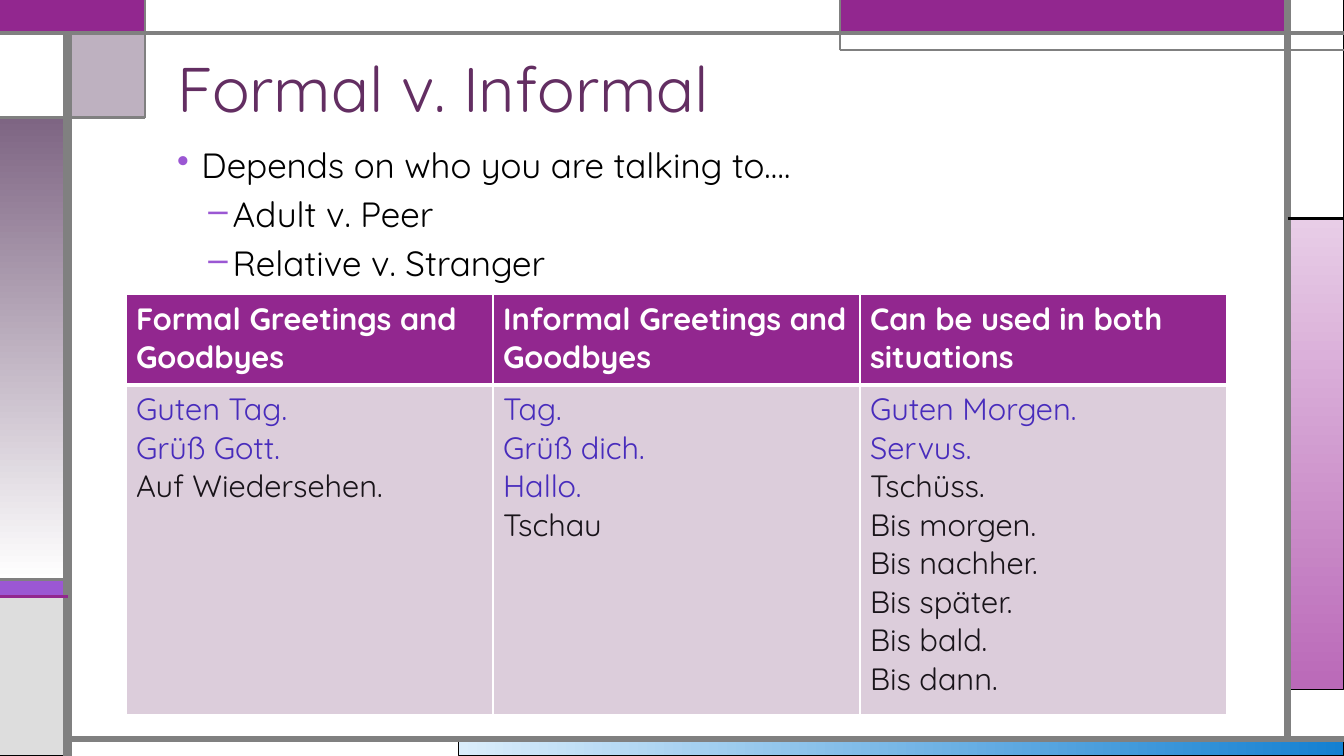
from dataclasses import dataclass

from lxml import etree
from pptx import Presentation
from pptx.dml.color import RGBColor
from pptx.enum.shapes import MSO_CONNECTOR, MSO_SHAPE
from pptx.enum.text import MSO_ANCHOR, PP_ALIGN
from pptx.oxml.ns import qn
from pptx.util import Inches, Pt

RECTANGLE = MSO_SHAPE.RECTANGLE
STRAIGHT = MSO_CONNECTOR.STRAIGHT
BOTTOM = MSO_ANCHOR.BOTTOM
LEFT = PP_ALIGN.LEFT

FONT = "Quicksand"
WHITE = RGBColor(0xFF, 0xFF, 0xFF)
BLACK = RGBColor(0x00, 0x00, 0x00)
GRAY = RGBColor(0x80, 0x80, 0x80)
LIGHT_GRAY = RGBColor(0xDD, 0xDD, 0xDD)
MAGENTA = RGBColor(0x92, 0x27, 0x8F)
VIOLET = RGBColor(0x9B, 0x57, 0xD3)
BLUE_VIOLET = RGBColor(0x75, 0x5D, 0xD9)
MAUVE = RGBColor(0x7E, 0x65, 0x83)
PALE_BLUE = RGBColor(0xDA, 0xED, 0xFB)
BLUE = RGBColor(0x14, 0x80, 0xD1)
PALE_PINK = RGBColor(0xE8, 0xCD, 0xE7)
PINK = RGBColor(0xBA, 0x69, 0xB8)
PLUM = RGBColor(0x63, 0x2E, 0x62)
CELL_FILL = RGBColor(0xDC, 0xCD, 0xDB)
GREETING = RGBColor(0x48, 0x2C, 0xBC)
GOODBYE = RGBColor(0x19, 0x14, 0x1A)

# Edges of the frame around the slide, in inches
WIDTH, HEIGHT = 13.33, 7.5
BAR_X, TAB_X, BANNER_X, RIGHT_X = 0.67, 1.44, 8.33, 12.77
TOP_Y, TAB_Y, STRIPE_Y, BASE_Y, FLOOR_Y = 0.33, 1.17, 5.75, 5.92, 7.33
PANEL_Y, BANNER_Y = 2.17, 0.5


@dataclass(frozen=True)
class Block:
    left: float
    top: float
    right: float
    bottom: float
    color: RGBColor
    line: RGBColor = BLACK
    line_width: float = 0.75
    end_color: RGBColor | None = None
    angle: int = 0
    alpha: int = 100


@dataclass(frozen=True)
class Rule:
    x1: float
    y1: float
    x2: float
    y2: float
    width: float
    color: RGBColor = GRAY


@dataclass(frozen=True)
class Bullet:
    text: str
    mark: str
    level: int
    margin: float
    space_before: int


@dataclass(frozen=True)
class Column:
    heading: str
    greetings: list[str]
    goodbyes: list[str]


BLOCKS = [
    Block(4.55, FLOOR_Y, WIDTH, HEIGHT, PALE_BLUE, end_color=BLUE),
    Block(RIGHT_X, PANEL_Y, WIDTH, 6.84, PALE_PINK, end_color=PINK, angle=270),
    Block(0, STRIPE_Y, BAR_X, BASE_Y, VIOLET),
    Block(0, BASE_Y, BAR_X, HEIGHT, LIGHT_GRAY),
    Block(RIGHT_X, 0, WIDTH, PANEL_Y, WHITE),
    Block(BANNER_X, 0, RIGHT_X, TOP_Y, MAGENTA, BLUE_VIOLET),
    Block(BAR_X, TOP_Y, TAB_X, TAB_Y, MAUVE, alpha=50),
    Block(0, TAB_Y, BAR_X, STRIPE_Y, MAUVE, end_color=WHITE, angle=270),
    Block(0, TOP_Y, BAR_X, TAB_Y, WHITE),
    Block(0, 0, TAB_X, TOP_Y, MAGENTA, MAGENTA, 1.5),
    Block(TAB_X, 0, BANNER_X, TOP_Y, WHITE, GRAY),
]
RULES = [
    Rule(BAR_X, HEIGHT, BAR_X, TOP_Y, 6),
    Rule(BAR_X, FLOOR_Y, WIDTH, FLOOR_Y, 4.5),
    Rule(RIGHT_X, FLOOR_Y, RIGHT_X, 0, 4.5),
    Rule(0, TOP_Y, WIDTH, TOP_Y, 3),
    Rule(WIDTH, BANNER_Y, BANNER_X, BANNER_Y, 1.5),
    Rule(BANNER_X, BANNER_Y, BANNER_X, 0, 1.5),
    Rule(RIGHT_X, PANEL_Y, WIDTH, PANEL_Y, 2.25, BLACK),
    Rule(TAB_X, 0, TAB_X, TAB_Y, 1.5),
    Rule(TAB_X, TAB_Y, 0, TAB_Y, 2.25),
    Rule(BAR_X, STRIPE_Y, 0, STRIPE_Y, 2.25),
    Rule(BAR_X, BASE_Y, 0, BASE_Y, 2.25, MAGENTA),
]
BULLETS = [
    Bullet("Depends on who you are talking to….", "•", 0, 0.24, 18),
    Bullet("Adult v. Peer", "–", 1, 0.55, 8),
    Bullet("Relative v. Stranger", "–", 1, 0.55, 8),
]
COLUMNS = [
    Column("Formal Greetings and Goodbyes", ["Guten Tag.", "Grüß Gott."], ["Auf Wiedersehen."]),
    Column("Informal Greetings and Goodbyes", ["Tag.", "Grüß dich.", "Hallo."], ["Tschau"]),
    Column("Can be used in both situations", ["Guten Morgen.", "Servus."],
           ["Tschüss.", "Bis morgen.", "Bis nachher.", "Bis später.", "Bis bald.", "Bis dann."]),
]


def style_font(paragraph, size: float, color: RGBColor, bold: bool = False) -> None:
    font = paragraph.font
    font.name, font.size, font.bold = FONT, Pt(size), bold
    font.color.rgb = color


def draw_block(slide, block: Block) -> None:
    shape = slide.shapes.add_shape(
        RECTANGLE, Inches(block.left), Inches(block.top),
        Inches(block.right - block.left), Inches(block.bottom - block.top))
    shape.shadow.inherit = False
    if block.end_color is None:
        shape.fill.solid()
        shape.fill.fore_color.rgb = block.color
    else:
        shape.fill.gradient()
        shape.fill.gradient_angle = block.angle
        for stop, color in zip(shape.fill.gradient_stops, (block.color, block.end_color)):
            stop.color.rgb = color
    if block.alpha < 100:
        color_element = shape.fill._xPr.find(f"{qn('a:solidFill')}/{qn('a:srgbClr')}")
        etree.SubElement(color_element, qn("a:alpha"), val=str(block.alpha * 1000))
    shape.line.color.rgb = block.line
    shape.line.width = Pt(block.line_width)


def draw_rule(slide, rule: Rule) -> None:
    connector = slide.shapes.add_connector(
        STRAIGHT, Inches(rule.x1), Inches(rule.y1), Inches(rule.x2), Inches(rule.y2))
    connector.line.color.rgb = rule.color
    connector.line.width = Pt(rule.width)
    etree.SubElement(connector._element.spPr, qn("a:effectLst"))


def write_title(slide) -> None:
    title = slide.shapes.title
    title.left, title.top = Inches(1.66), Inches(0.58)
    title.width, title.height = Inches(10.5), Inches(0.72)
    title.text_frame.text = "Formal v. Informal"
    title.text_frame.vertical_anchor = BOTTOM
    paragraph = title.text_frame.paragraphs[0]
    paragraph.alignment, paragraph.line_spacing = LEFT, 0.9
    style_font(paragraph, 45, PLUM)


def write_bullets(slide) -> None:
    box = slide.shapes.add_textbox(Inches(1.66), Inches(1.42), Inches(10.5), Inches(1.45))
    frame = box.text_frame
    frame.word_wrap = True
    frame.text = "\n".join(bullet.text for bullet in BULLETS)
    for paragraph, bullet in zip(frame.paragraphs, BULLETS):
        paragraph.level, paragraph.line_spacing = bullet.level, 0.9
        paragraph.space_before = Pt(bullet.space_before)
        style_font(paragraph, 25, BLACK)
        properties = paragraph._p.get_or_add_pPr()
        properties.set("marL", str(Inches(bullet.margin)))
        properties.set("indent", str(Inches(-0.24)))
        mark = etree.Element(qn("a:buChar"), char=bullet.mark)
        mark_color = etree.Element(qn("a:buClr"))
        etree.SubElement(mark_color, qn("a:srgbClr"), val=str(VIOLET))
        default_run = properties.find(qn("a:defRPr"))
        default_run.addprevious(mark_color)
        default_run.addprevious(mark)


def format_cell(cell, fill: RGBColor, top: float, bottom: float) -> None:
    """Fill the cell and give it white borders, in points."""
    cell.fill.solid()
    cell.fill.fore_color.rgb = fill
    properties = cell._tc.get_or_add_tcPr()
    for index, (side, width) in enumerate([("L", 1), ("R", 1), ("T", top), ("B", bottom)]):
        border = etree.Element(qn(f"a:ln{side}"), w=str(Pt(width)))
        border_fill = etree.SubElement(border, qn("a:solidFill"))
        etree.SubElement(border_fill, qn("a:srgbClr"), val=str(WHITE))
        properties.insert(index, border)


def draw_table(slide) -> None:
    table = slide.shapes.add_table(
        2, len(COLUMNS), Inches(1.25), Inches(2.92), Inches(10.92), Inches(4.17)).table
    table.rows[0].height, table.rows[1].height = Inches(0.9), Inches(3.27)
    for index, column in enumerate(COLUMNS):
        table.columns[index].width = Inches(3.64)
        heading, phrases = table.cell(0, index), table.cell(1, index)
        heading.text = column.heading
        style_font(heading.text_frame.paragraphs[0], 22, WHITE, bold=True)
        format_cell(heading, MAGENTA, top=1, bottom=3)
        phrases.text = "\n".join(column.greetings + column.goodbyes)
        for number, paragraph in enumerate(phrases.text_frame.paragraphs):
            style_font(paragraph, 22, GREETING if number < len(column.greetings) else GOODBYE)
        format_cell(phrases, CELL_FILL, top=3, bottom=1)


def main() -> None:
    presentation = Presentation()
    presentation.slide_width, presentation.slide_height = Inches(WIDTH), Inches(HEIGHT)
    slide = presentation.slides.add_slide(presentation.slide_layouts[5])
    for block in BLOCKS:
        draw_block(slide, block)
    for rule in RULES:
        draw_rule(slide, rule)
    write_title(slide)
    write_bullets(slide)
    draw_table(slide)
    presentation.save("out.pptx")


if __name__ == "__main__":
    main()
